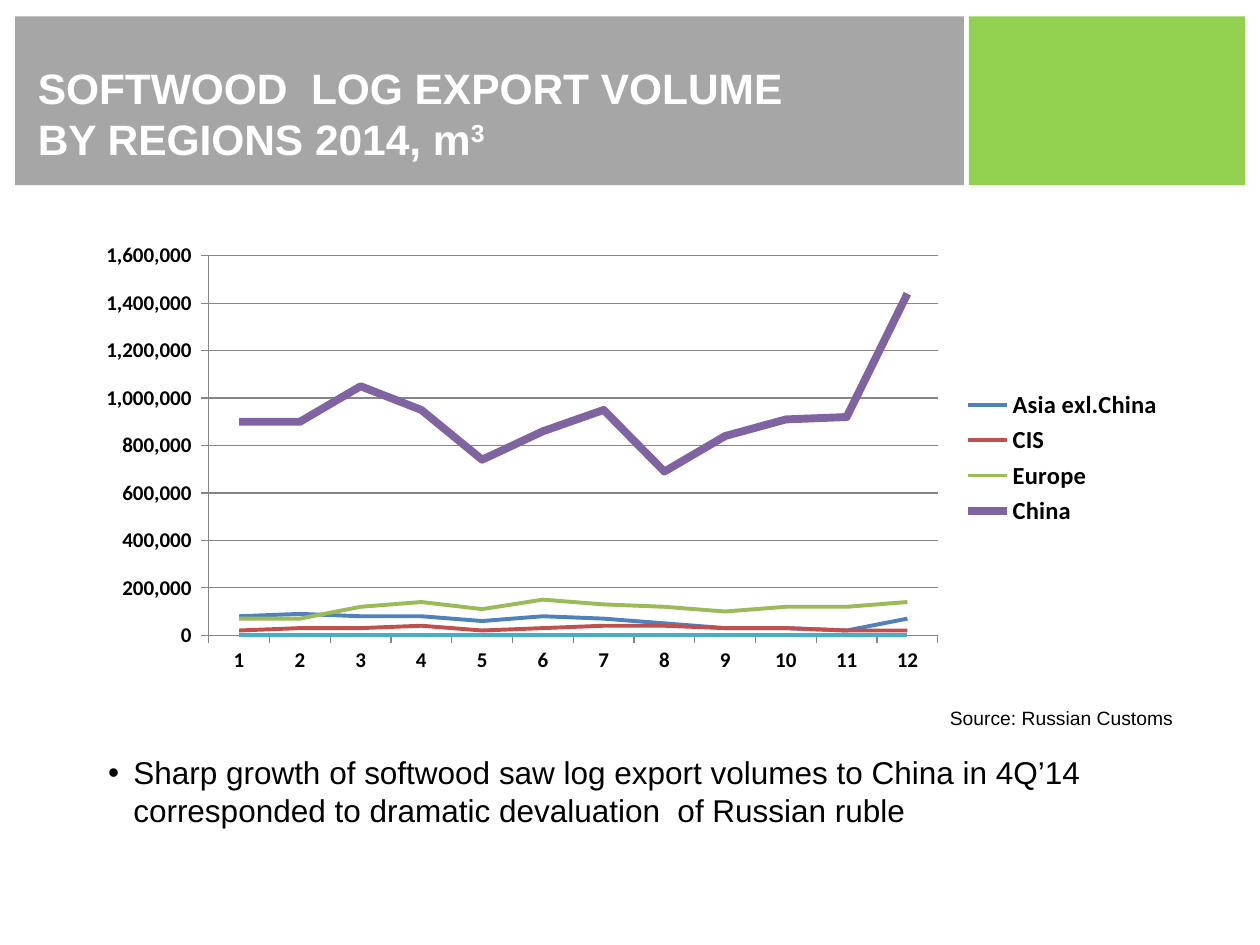
from dataclasses import dataclass

from lxml.etree import SubElement
from pptx import Presentation
from pptx.chart.data import CategoryChartData
from pptx.dml.color import RGBColor
from pptx.enum.chart import XL_CHART_TYPE, XL_LEGEND_POSITION, XL_TICK_MARK
from pptx.enum.shapes import MSO_SHAPE
from pptx.enum.text import MSO_ANCHOR, PP_ALIGN
from pptx.oxml import parse_xml
from pptx.oxml.ns import nsdecls, qn
from pptx.util import Emu, Pt

PX = 9144
BLACK = RGBColor(0x00, 0x00, 0x00)
WHITE = RGBColor(0xFF, 0xFF, 0xFF)
GRAY = RGBColor(0xA6, 0xA6, 0xA6)
GREEN = RGBColor(0x92, 0xD0, 0x50)
AXIS = RGBColor(0x86, 0x86, 0x86)


@dataclass
class Box:
    x: int
    y: int
    w: int
    h: int

    def emu(self) -> list[Emu]:
        return [Emu(v * PX) for v in (self.x, self.y, self.w, self.h)]


@dataclass
class Region:
    name: str
    color: RGBColor
    thousands: list[int]
    width: float = 2.25
    in_legend: bool = True


BANDS = [(Box(12, 13, 753, 134), GRAY), (Box(769, 13, 219, 134), GREEN)]
REGIONS = [
    Region("Asia exl.China", RGBColor(0x4F, 0x81, 0xBD),
           [80, 90, 80, 80, 60, 80, 70, 50, 30, 30, 20, 70]),
    Region("CIS", RGBColor(0xC0, 0x50, 0x4D),
           [20, 30, 30, 40, 20, 30, 40, 40, 30, 30, 20, 20]),
    Region("Europe", RGBColor(0x9B, 0xBB, 0x59),
           [70, 70, 120, 140, 110, 150, 130, 120, 100, 120, 120, 140]),
    Region("China", RGBColor(0x80, 0x64, 0xA2),
           [900, 900, 1050, 950, 740, 860, 950, 690, 840, 910, 920, 1440], 4.5),
    Region("Series 5", RGBColor(0x4B, 0xAC, 0xC6), [0] * 12, in_legend=False),
]


def add_text(p, text: str, size: float, color: RGBColor = BLACK,
             bold: bool = False, baseline: int = 0) -> None:
    """Append text to a paragraph, breaking the line at each newline."""
    for i, line in enumerate(text.split("\n")):
        if i:
            p.add_line_break()
        r = p.add_run()
        r.text = line
        r.font.name, r.font.size, r.font.bold = "Arial", Pt(size), bold
        r.font.color.rgb = color
        if baseline:
            r.font._element.set("baseline", str(baseline * 1000))


def add_band(s, box: Box, color: RGBColor) -> None:
    """Draw one plain header rectangle."""
    sp = s.shapes.add_shape(MSO_SHAPE.RECTANGLE, *box.emu())
    sp.shadow.inherit = False
    sp.fill.solid()
    sp.fill.fore_color.rgb = color
    sp.line.fill.background()


def add_title(s, box: Box) -> None:
    """Place the title placeholder over the header bands."""
    sp = s.shapes.title
    sp.element.getparent().append(sp.element)
    sp.left, sp.top, sp.width, sp.height = box.emu()
    tf = sp.text_frame
    tf.word_wrap = True
    tf.vertical_anchor = MSO_ANCHOR.TOP
    tf.margin_top, tf.margin_bottom = Emu(28 * PX), 0
    p = tf.paragraphs[0]
    p.alignment = PP_ALIGN.LEFT
    p.line_spacing = 1.0
    add_text(p, "SOFTWOOD  LOG EXPORT VOLUME\nBY REGIONS 2014, m", 24.3, WHITE, True)
    add_text(p, "3", 24.3, WHITE, True, baseline=30)


def add_box(s, box: Box, text: str, size: float, wrap: bool = True,
            bullet: bool = False) -> None:
    """Add a text box holding one paragraph."""
    tf = s.shapes.add_textbox(*box.emu()).text_frame
    tf.word_wrap = wrap
    p = tf.paragraphs[0]
    if bullet:
        pPr = p._p.get_or_add_pPr()
        pPr.set("marL", str(20 * PX))
        pPr.set("indent", str(-20 * PX))
        SubElement(pPr, qn("a:buFont")).set("typeface", "Arial")
        SubElement(pPr, qn("a:buChar")).set("char", "•")
    add_text(p, text, size)


def add_line_chart(s, box: Box, regions: list[Region]) -> None:
    """Chart the monthly volumes with one line per region."""
    data = CategoryChartData()
    data.categories = [str(m) for m in range(1, 13)]
    for region in regions:
        data.add_series(region.name, [v * 1000 for v in region.thousands])
    chart = s.shapes.add_chart(XL_CHART_TYPE.LINE, *box.emu(), data).chart
    chart.has_title = False
    chart.font.name, chart.font.size = "Calibri", Pt(12)
    chart.font.color.rgb = BLACK

    plot = chart.plots[0]
    plot.vary_by_categories = False
    for series, region in zip(plot.series, regions):
        series.smooth = False
        series.format.line.color.rgb = region.color
        series.format.line.width = Pt(region.width)

    for axis in (chart.category_axis, chart.value_axis):
        axis.major_tick_mark = XL_TICK_MARK.OUTSIDE
        axis.minor_tick_mark = XL_TICK_MARK.NONE
        axis.format.line.color.rgb = AXIS
        axis.tick_labels.font.bold = True
        axis.tick_labels.font.size = Pt(12)
    value = chart.value_axis
    value.minimum_scale, value.maximum_scale, value.major_unit = 0, 1600000, 200000
    value.has_major_gridlines = True
    value.major_gridlines.format.line.color.rgb = AXIS
    value.tick_labels.number_format = r"#,##0_ ;\-#,##0\ "
    value.tick_labels.number_format_is_linked = False

    chart.has_legend = True
    legend = chart.legend
    legend.position = XL_LEGEND_POSITION.RIGHT
    legend.include_in_layout = False
    legend.font.size, legend.font.bold = Pt(14), True
    position = legend._element.find(qn("c:legendPos"))
    for i, region in enumerate(regions):
        if not region.in_legend:
            position.addnext(parse_xml(
                f'<c:legendEntry {nsdecls("c")}><c:idx val="{i}"/>'
                '<c:delete val="1"/></c:legendEntry>'))


def main() -> None:
    """Build the slide and save it."""
    prs = Presentation()
    prs.slide_width, prs.slide_height = Emu(1000 * PX), Emu(750 * PX)
    s = prs.slides.add_slide(prs.slide_layouts[5])
    for box, color in BANDS:
        add_band(s, box, color)
    add_line_chart(s, Box(67, 186, 866, 355), REGIONS)
    add_title(s, Box(20, 21, 732, 102))
    add_box(s, Box(76, 593, 803, 71),
            "Sharp growth of softwood saw log export volumes to China in 4Q’14 "
            "corresponded to dramatic devaluation  of Russian ruble", 18, bullet=True)
    add_box(s, Box(744, 556, 198, 29), "Source: Russian Customs", 11, wrap=False)
    prs.save("out.pptx")


if __name__ == "__main__":
    main()
